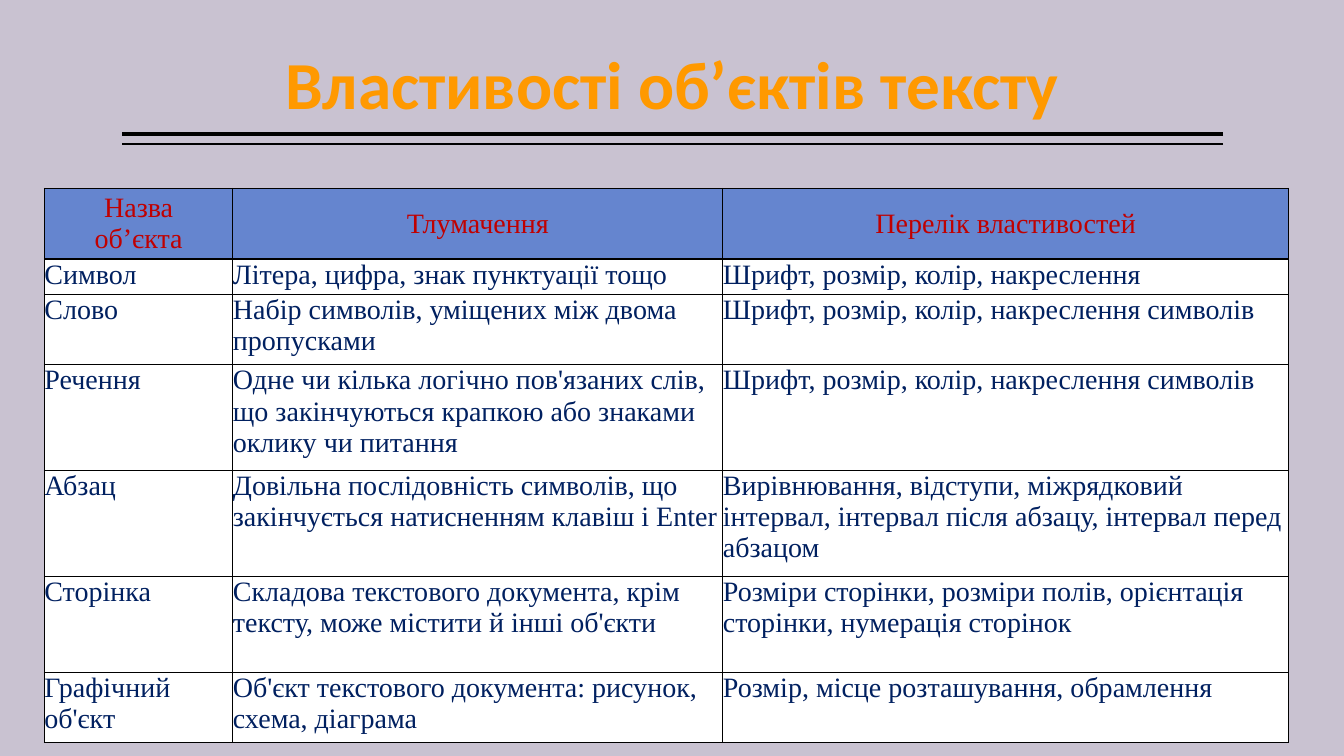
from dataclasses import dataclass
from lxml.etree import SubElement as Sub
from pptx import Presentation
from pptx.dml.color import RGBColor as Rgb
from pptx.enum.shapes import MSO_CONNECTOR as Conn
from pptx.enum.text import MSO_ANCHOR as Anchor, MSO_AUTO_SIZE as Auto, PP_ALIGN as Align
from pptx.oxml.ns import qn
from pptx.util import Inches, Pt

TITLE = "Властивості об’єктів тексту"
HEAD = ("Назва\nоб’єкта", "Тлумачення", "Перелік властивостей")
ROWS = [
    ("Символ", "Літера, цифра, знак пунктуації тощо",
     "Шрифт, розмір, колір, накреслення"),
    ("Слово", "Набір символів, уміщених між двома пропусками",
     "Шрифт, розмір, колір, накреслення символів"),
    ("Речення",
     "Одне чи кілька логічно пов'язаних слів, що закінчуються крапкою або знаками оклику чи питання",
     "Шрифт, розмір, колір, накреслення символів"),
    ("Абзац", "Довільна послідовність символів, що закінчується натисненням клавіш і Enter",
     "Вирівнювання, відступи, міжрядковий інтервал, інтервал після абзацу, інтервал перед абзацом"),
    ("Сторінка", "Складова текстового документа, крім тексту, може містити й інші об'єкти",
     "Розміри сторінки, розміри полів, орієнтація сторінки, нумерація сторінок"),
    ("Графічний об'єкт", "Об'єкт текстового документа: рисунок, схема, діаграма",
     "Розмір, місце розташування, обрамлення"),
]
WIDTHS = (1.87, 4.86, 5.61)
HEIGHTS = (0.7, 0.35, 0.7, 1.05, 1.05, 0.95, 0.7)
RULES = ((1.33, 3), (1.43, 1))
LEFT, WIDE = 1.21, 10.92


@dataclass(frozen=True)
class Theme:
    back: str = "C9C2D1"
    title: str = "FF9900"
    line: str = "000000"
    band: str = "6585CF"
    head: str = "C00000"
    cell: str = "FFFFFF"
    body: str = "002060"
    sans: str = "Calibri"
    serif: str = "Times New Roman"
    big: int = 48
    small: int = 20


LOOK = Theme()


def write(para, text, face, size, color, bold=False):
    run = para.add_run()
    run.text = text
    font = run.font
    font.name, font.size, font.bold = face, Pt(size), bold
    font.color.rgb = Rgb.from_string(color)


def add_title(slide):
    shape = slide.shapes.title
    shape.left, shape.top = Inches(LEFT), Inches(0.08)
    shape.width, shape.height = Inches(WIDE), Inches(1.2)
    frame = shape.text_frame
    frame.word_wrap, frame.auto_size = True, Auto.NONE
    frame.vertical_anchor = Anchor.BOTTOM
    frame.margin_left = frame.margin_right = 0
    frame.margin_top = frame.margin_bottom = Inches(0.05)
    para = frame.paragraphs[0]
    para.alignment, para.line_spacing = Align.CENTER, 0.9
    write(para, TITLE, LOOK.sans, LOOK.big, LOOK.title, True)


def add_rule(slide, top, width):
    rule = slide.shapes.add_connector(
        Conn.STRAIGHT, Inches(LEFT + WIDE), Inches(top), Inches(LEFT), Inches(top))
    rule.line.width = Pt(width)
    rule.line.color.rgb = Rgb.from_string(LOOK.line)
    Sub(rule._element.spPr, qn("a:effectLst"))


def add_edges(cell):
    props = cell._tc.get_or_add_tcPr()
    for spot, side in enumerate(("lnL", "lnR", "lnT", "lnB")):
        edge = props.makeelement(qn(f"a:{side}"), {"w": str(Pt(1))})
        Sub(Sub(edge, qn("a:solidFill")), qn("a:srgbClr"), val=LOOK.line)
        props.insert(spot, edge)


def fill_cell(cell, text, head):
    cell.margin_left = cell.margin_right = cell.margin_top = cell.margin_bottom = 0
    cell.vertical_anchor = Anchor.MIDDLE if head else Anchor.TOP
    cell.fill.solid()
    cell.fill.fore_color.rgb = Rgb.from_string(LOOK.band if head else LOOK.cell)
    add_edges(cell)
    frame = cell.text_frame
    for spot, line in enumerate(text.split("\n")):
        para = frame.add_paragraph() if spot else frame.paragraphs[0]
        para.alignment = Align.CENTER if head else Align.LEFT
        write(para, line, LOOK.serif, LOOK.small, LOOK.head if head else LOOK.body)


def add_grid(slide):
    grid = slide.shapes.add_table(
        len(HEIGHTS), len(WIDTHS), Inches(0.44), Inches(1.87),
        Inches(sum(WIDTHS)), Inches(sum(HEIGHTS))).table
    for col, width in zip(grid.columns, WIDTHS):
        col.width = Inches(width)
    for row, high, texts in zip(grid.rows, HEIGHTS, [HEAD, *ROWS]):
        row.height = Inches(high)
        for cell, text in zip(row.cells, texts):
            fill_cell(cell, text, texts is HEAD)


def main():
    """Build the slide on the properties of text objects."""
    deck = Presentation()
    deck.slide_width, deck.slide_height = Inches(13.33), Inches(7.5)
    slide = deck.slides.add_slide(deck.slide_layouts[5])
    slide.background.fill.solid()
    slide.background.fill.fore_color.rgb = Rgb.from_string(LOOK.back)
    for top, width in RULES:
        add_rule(slide, top, width)
    add_title(slide)
    add_grid(slide)
    deck.save("out.pptx")


if __name__ == "__main__":
    main()
